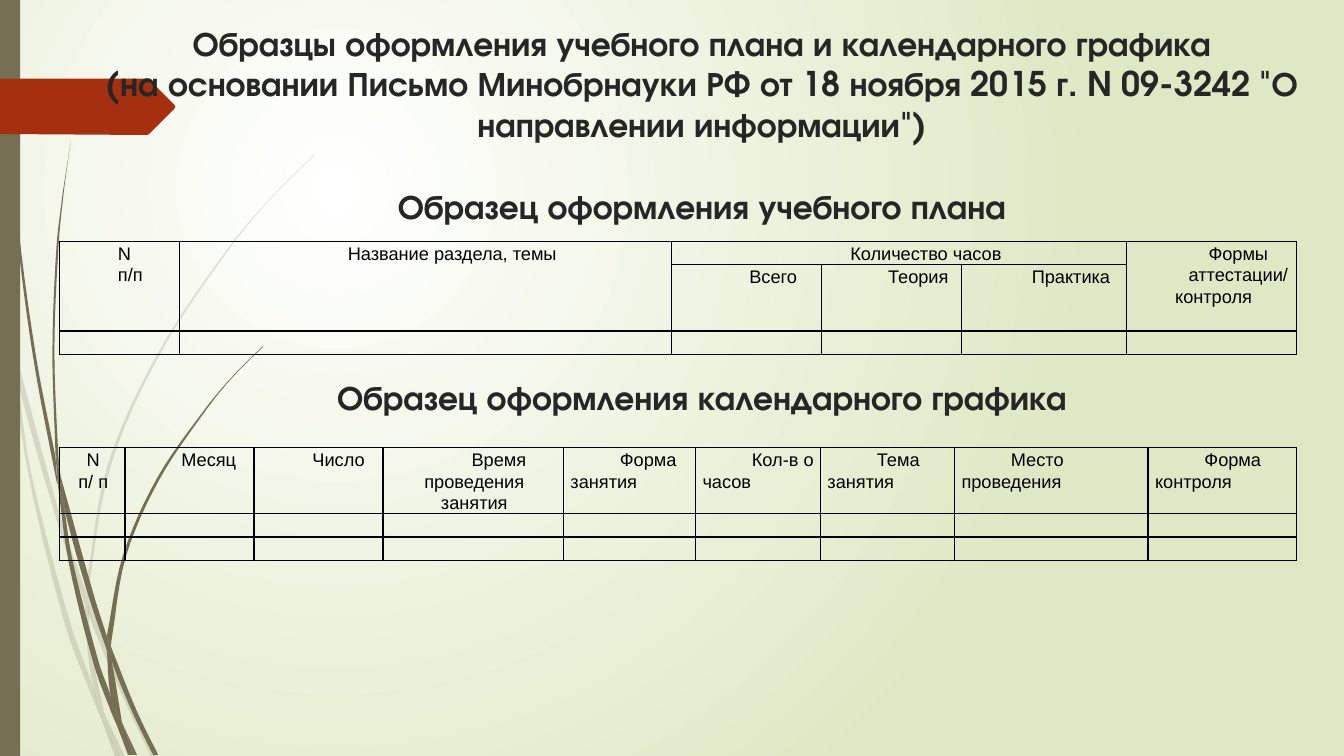
from dataclasses import dataclass
from math import dist

from lxml.etree import SubElement
from pptx import Presentation
from pptx.dml.color import RGBColor
from pptx.enum.shapes import MSO_SHAPE
from pptx.enum.text import MSO_ANCHOR, MSO_AUTO_SIZE, PP_ALIGN
from pptx.oxml.ns import qn
from pptx.util import Inches, Pt


@dataclass(frozen=True)
class Theme:
    olive: str = "766F54"
    red: str = "A53010"
    title_ink: str = "262626"
    table_ink: str = "000000"
    glow: str = "FFFFFF"
    meadow: str = "DFE8C4"
    title_font: str = "TeX Gyre Adventor"
    table_font: str = "Arial"
    title_size: float = 24.3
    table_size: float = 13
    border: float = 1


LEFT, CENTER = PP_ALIGN.LEFT, PP_ALIGN.CENTER
COLUMNS, ROWS = 133.33, 75  # grid cells are a tenth of an inch


def cells(count):
    return Inches(count / 10)


def write(paragraph, text, *, size, font, color, bold=False, align=LEFT,
          line=1.0, before=0, margin=0, indent=0):
    """Put formatted text into a paragraph; margin and indent are grid cells."""
    paragraph.alignment, paragraph.line_spacing = align, line
    paragraph.space_before, paragraph.space_after = Pt(before), Pt(0)
    properties = paragraph._p.get_or_add_pPr()
    properties.set("marL", str(cells(margin)))
    properties.set("indent", str(cells(indent)))
    if not text:
        SubElement(paragraph._p, qn("a:endParaRPr"), sz=str(int(size * 100)))
        return
    run = paragraph.add_run()
    run.text = text
    run.font.size, run.font.name, run.font.bold = Pt(size), font, bold
    run.font.color.rgb = RGBColor.from_string(color)


def smooth(points, steps=6):
    """Sample a smooth curve through the points, spaced by chord length."""
    last = len(points) - 1

    def slope(i):
        a, b, c = points[max(i - 1, 0)], points[i], points[min(i + 1, last)]
        length = dist(a, b) + dist(b, c)
        return [(end - start) / length for start, end in zip(a, c)]

    curve = [points[0]]
    for i in range(last):
        a, b = points[i], points[i + 1]
        length, slope_a, slope_b = dist(a, b), slope(i), slope(i + 1)
        for step in range(1, steps + 1):
            t = step / steps
            weight_b = t * t * (3 - 2 * t)
            pull_a, pull_b = t * (1 - t) ** 2 * length, t * t * (t - 1) * length
            curve.append(tuple(
                a[k] * (1 - weight_b) + b[k] * weight_b + slope_a[k] * pull_a + slope_b[k] * pull_b
                for k in (0, 1)))
    return curve


class SlideBuilder:
    def __init__(self, presentation, theme):
        self.theme = theme
        self.slide = presentation.slides.add_slide(presentation.slide_layouts[5])

    def background(self):
        fill = self.slide.background.fill
        fill.gradient()
        for stop, color in zip(fill.gradient_stops, (self.theme.glow, self.theme.meadow)):
            stop.color.rgb = RGBColor.from_string(color)
        gradient = self.slide._element.find(".//" + qn("a:gradFill"))
        gradient.remove(gradient.find(qn("a:lin")))
        circle = SubElement(gradient, qn("a:path"), path="circle")
        SubElement(circle, qn("a:fillToRect"), l="50000", t="50000", r="100000", b="100000")

    def paint(self, shape, color, alpha=100):
        shape.shadow.inherit = False
        shape.fill.solid()
        shape.fill.fore_color.rgb = RGBColor.from_string(color)
        shape.line.fill.background()
        if alpha < 100:
            tint = shape._element.spPr.find(".//" + qn("a:srgbClr"))
            SubElement(tint, qn("a:alpha"), val=str(alpha * 1000))

    def bar(self, left, top, width, height, color):
        box = map(cells, (left, top, width, height))
        self.paint(self.slide.shapes.add_shape(MSO_SHAPE.RECTANGLE, *box), color)

    def outline(self, points, color, alpha=100):
        start, *rest = [(cells(x), cells(y)) for x, y in points]
        builder = self.slide.shapes.build_freeform(*start)
        builder.add_line_segments(rest, close=True)
        self.paint(builder.convert_to_shape(), color, alpha)

    def title(self, left, top, width, height, lines):
        title = self.slide.shapes.title
        title.left, title.top, title.width, title.height = map(cells, (left, top, width, height))
        self.slide.shapes._spTree.append(title._element)
        frame = title.text_frame
        frame.word_wrap, frame.auto_size = True, MSO_AUTO_SIZE.NONE
        frame.vertical_anchor = MSO_ANCHOR.TOP
        for i, (text, before) in enumerate(lines):
            paragraph = frame.add_paragraph() if i else frame.paragraphs[0]
            write(paragraph, text, size=self.theme.title_size, font=self.theme.title_font,
                  color=self.theme.title_ink, bold=True, align=CENTER, before=before)

    def table(self, left, top, widths, heights, texts, right_inset, merges=()):
        box = map(cells, (left, top, sum(widths), sum(heights)))
        table = self.slide.shapes.add_table(len(heights), len(widths), *box).table
        table.first_row = table.horz_banding = False
        for column, width in zip(table.columns, widths):
            column.width = cells(width)
        for row, height in zip(table.rows, heights):
            row.height = cells(height)
        for first_row, first_column, last_row, last_column in merges:
            table.cell(first_row, first_column).merge(table.cell(last_row, last_column))
        for r in range(len(heights)):
            for c in range(len(widths)):
                self.cell(table.cell(r, c), right_inset, *texts.get((r, c), ("",)))

    def cell(self, cell, right_inset, text, align=LEFT, margin=0, indent=4.9):
        cell.margin_left, cell.margin_right = cells(0.7), cells(right_inset)
        cell.margin_top, cell.margin_bottom = cells(0.1), 0
        properties = cell._tc.get_or_add_tcPr()
        for side in ("lnL", "lnR", "lnT", "lnB"):
            line = SubElement(properties, qn("a:" + side), w=str(Pt(self.theme.border)))
            SubElement(SubElement(line, qn("a:solidFill")), qn("a:srgbClr"), val=self.theme.table_ink)
        cell.fill.background()
        for i, part in enumerate(text.split("\n")):
            paragraph = cell.text_frame.add_paragraph() if i else cell.text_frame.paragraphs[0]
            write(paragraph, part, size=self.theme.table_size, font=self.theme.table_font,
                  color=self.theme.table_ink, align=align, line=1.07, margin=margin, indent=indent)


# Grass blades: each is a pair of edges that enclose it
PALE_BLADES = [
    ([(1.1, 35), (0.9, 32.2), (0, 28.2)], [(0, 29.9), (1, 34.4)]),
    ([(1.4, 34.5), (1.7, 37.6), (5.8, 52.2), (8.4, 59.9)], [(8.5, 58.6), (6.2, 52), (1.4, 34.5)]),
    ([(8.8, 59.6), (8.8, 61), (12.3, 69.4), (15, 75.1)], [(15.5, 75.1), (12.7, 69.2), (9.2, 60.7)]),
    ([(10.5, 71.1), (11.9, 75.1)], [(12.4, 75.1)]),
    ([(1.1, 35), (2.8, 47), (6.5, 62.1), (9.2, 69.3), (10.1, 71.4)],
     [(9.9, 70.7), (9.3, 68.3), (7, 61.9), (3.1, 46.9), (1.7, 37.6)]),
    ([(8.4, 59.9), (8.7, 64.6), (9.3, 68.3), (10.5, 71.1)], [(10.3, 70.6), (9.1, 64.6), (8.8, 60.8)]),
    ([(8.8, 59.6), (8.8, 58.4), (11, 46.2), (16, 34.9), (22.9, 24.5), (26.8, 19.8), (31.2, 15.4)],
     [(31.2, 15.3), (26.8, 19.7), (22.8, 24.4), (15.8, 34.8), (10.7, 46.1), (8.5, 58.4)]),
    ([(10.1, 71.4), (11.4, 75.1)], [(11.9, 75.1)]),
    ([(8.8, 60.8), (8.8, 59.6)], [(8.5, 58.6), (8.4, 59.9)]),
    ([(9.6, 69.2), (9.3, 68.3), (9.9, 70.7), (10.1, 71.4), (11.9, 75.1)], [(10.5, 71.1)]),
]
DARK_BLADES = [
    ([(0.3, 0), (0.4, 4.8), (0.7, 11), (1.7, 23.3), (3.3, 35.5), (5.6, 47.7), (5.7, 48.1)],
     [(5.5, 45.3), (3.6, 35.5), (1.9, 23.2), (0.8, 10.9), (0.5, 4.8), (0.4, 0)]),
    ([(6, 47.2), (6.4, 50.5), (8.8, 59.2), (10.6, 64.5)], [(10.6, 63.1), (9.3, 59), (6, 47.2)]),
    ([(11, 64.1), (11.1, 65.6), (13.2, 70.8), (15.2, 74.9)], [(15.7, 74.9), (13.6, 70.6), (11.3, 64.9)]),
    ([(5.7, 47.7), (6.8, 55.7), (9.3, 65.9), (11.1, 70.8), (11.7, 72.2)],
     [(11.6, 71.7), (11, 69.1), (9.8, 65.7), (7.2, 55.6), (6.4, 50.5)]),
    ([(6, 47.2), (5.8, 45.3), (5.4, 34.9), (5.8, 24.5), (6.3, 19.3), (7, 14.1)],
     [(6.2, 19.3), (5.6, 24.5), (5.2, 34.9), (5.5, 44.9)]),
    ([(12.2, 71.9), (13.3, 74.9)], [(13.6, 74.9)]),
    ([(5.7, 47.7), (6.4, 50.5)], [(6, 47.2), (5.5, 44.9)]),
    ([(11, 64.1), (11.1, 63.3), (12.5, 55.2), (15.8, 47.6), (20.5, 40.6), (23.1, 37.4), (26.1, 34.4)],
     [(26, 34.4), (23.1, 37.3), (20.4, 40.5), (15.6, 47.4), (12.2, 55.1), (10.6, 63.1)]),
    ([(11.7, 72.2), (12.7, 74.9)], [(13.1, 74.9)]),
    ([(10.6, 64.5), (11, 69.1), (12.2, 71.9)], [(12.1, 71.6), (11.1, 65.6), (10.9, 65.1)]),
    ([(10.6, 64.5), (11.1, 65.6)], [(11, 64.1), (10.6, 63.1)]),
    ([(11.6, 70.6), (11, 69.1), (11.7, 72.2), (13, 74.9)], [(13.3, 74.9), (12.2, 71.9)]),
]
RED_ARROW = [(0, 7.8), (14.6, 7.8), (14.8, 7.9), (17.3, 10.4), (17.4, 10.6),
             (17.3, 10.8), (14.8, 13.3), (14.6, 13.4), (0, 13.3)]

# Wording: title lines with the points of space before each, then table cells
TITLE_LINES = [
    ("Образцы оформления учебного плана и календарного графика", 0),
    ('(на основании Письмо Минобрнауки РФ от 18 ноября 2015 г. N 09-3242 "О направлении информации")', 0),
    ("Образец оформления учебного плана", 29),
    ("Образец оформления календарного графика", 107.5),
]
PLAN_TEXTS = {
    (0, 0): ("N\nп/п", LEFT, 0.2),
    (0, 1): ("Название раздела, темы", CENTER),
    (0, 2): ("Количество часов", CENTER),
    (0, 5): ("Формы\nаттестации/ контроля", CENTER),
    (1, 2): ("Всего", CENTER),
    (1, 3): ("Теория", CENTER),
    (1, 4): ("Практика", CENTER),
}
SCHEDULE_HEADERS = [
    ("N\nп/ п", CENTER, 0.2, -0.2), ("Месяц",), ("Число", LEFT, 0.2),
    ("Время проведения занятия", CENTER), ("Форма занятия",), ("Кол-в о часов",),
    ("Тема занятия",), ("Место проведения",), ("Форма контроля",),
]


def main():
    presentation = Presentation()
    presentation.slide_width, presentation.slide_height = cells(COLUMNS), cells(ROWS)
    theme = Theme()
    builder = SlideBuilder(presentation, theme)

    # Backdrop
    builder.background()
    for blades, alpha in ((PALE_BLADES, 20), (DARK_BLADES, 100)):
        for outer, inner in blades:
            builder.outline(smooth(outer) + smooth(inner), theme.olive, alpha)
    builder.bar(0, 0, 2, ROWS, theme.olive)
    builder.outline(RED_ARROW, theme.red)

    # Title and both tables
    builder.title(5.9, 1.7, 127.5, 14, TITLE_LINES)
    builder.table(5.9, 23.95, [11.9, 48.8, 14.9, 13.9, 16.4, 16.8], [2.3, 6.6, 2.3], PLAN_TEXTS, 0.3,
                  merges=[(0, 0, 1, 0), (0, 1, 1, 1), (0, 2, 0, 4), (0, 5, 1, 5)])
    builder.table(5.9, 44.4, [6.5, 12.8, 12.8, 17.9, 13.1, 12.4, 13.3, 19.2, 14.7], [6.5, 2.25, 2.25],
                  {(0, c): header for c, header in enumerate(SCHEDULE_HEADERS)}, 0.5)
    presentation.save("out.pptx")


if __name__ == "__main__":
    main()
